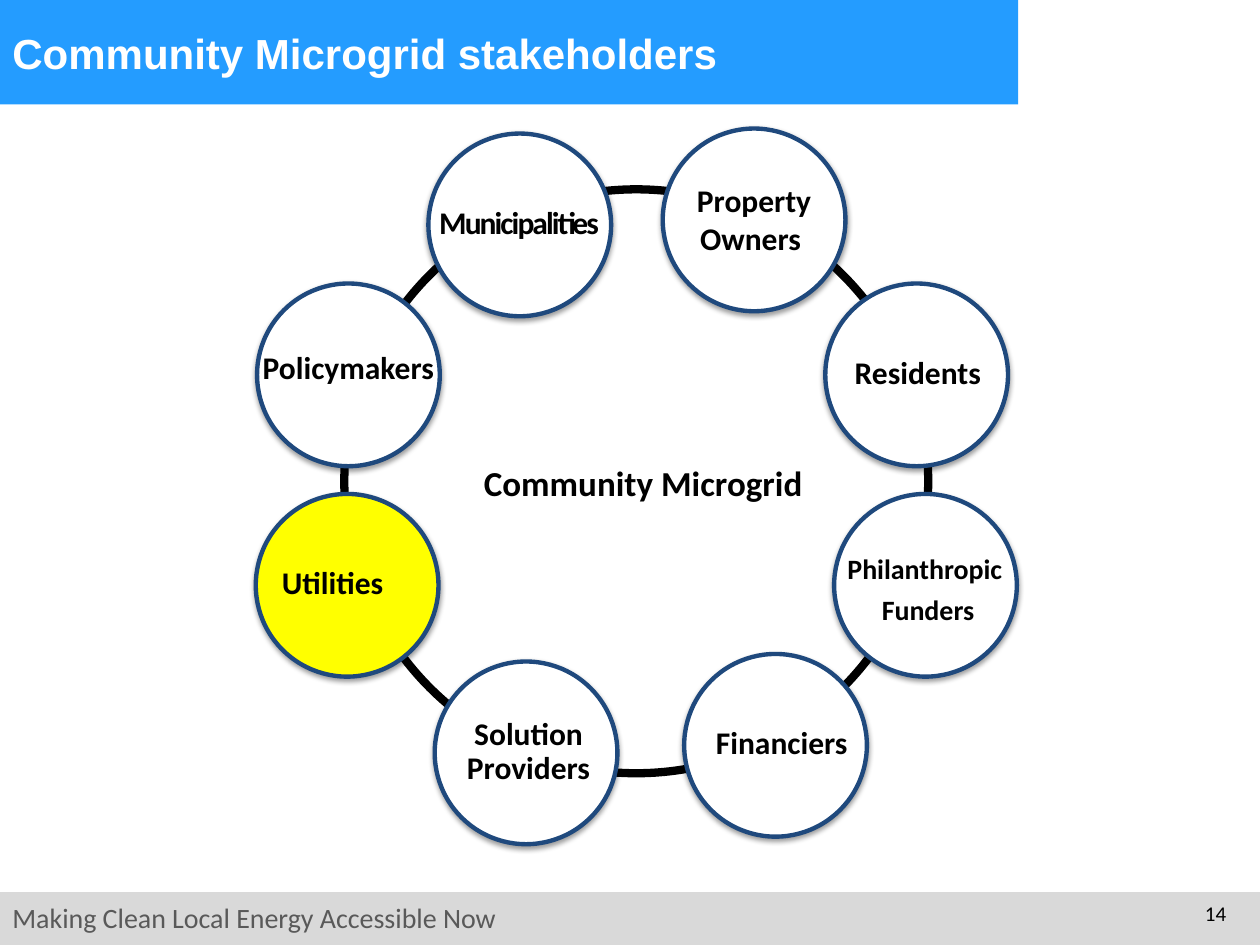
from lxml import etree
from pptx import Presentation
from pptx.dml.color import RGBColor
from pptx.enum.shapes import MSO_SHAPE
from pptx.enum.text import MSO_ANCHOR, PP_ALIGN
from pptx.oxml.ns import qn
from pptx.util import Inches, Pt

RECTANGLE, OVAL, DONUT = MSO_SHAPE.RECTANGLE, MSO_SHAPE.OVAL, MSO_SHAPE.DONUT
TOP, MIDDLE = MSO_ANCHOR.TOP, MSO_ANCHOR.MIDDLE
LEFT, CENTER, RIGHT = PP_ALIGN.LEFT, PP_ALIGN.CENTER, PP_ALIGN.RIGHT


def color(value):
    return RGBColor.from_string(value)


def add_text(place, lines, size, ink="000000", font="Calibri", bold=True,
             align=CENTER, anchor=TOP, wrap=True):
    box = page.shapes.add_textbox(*[Inches(length) for length in place])
    frame = box.text_frame
    frame.word_wrap = wrap
    frame.vertical_anchor = anchor
    for index, line in enumerate(lines):
        para = frame.paragraphs[0] if index == 0 else frame.add_paragraph()
        para.alignment = align
        span = para.add_run()
        span.text = line
        span.font.name = font
        span.font.size = Pt(size)
        span.font.bold = bold
        span.font.color.rgb = color(ink)
    return frame


deck = Presentation()
deck.slide_width, deck.slide_height = Inches(10), Inches(7.5)
page = deck.slides.add_slide(deck.slide_layouts[6])

# Footer band, title band and the ring behind the circles
for kind, place, fill in [
    (RECTANGLE, (0, 7.08, 10, 0.42), "D9D9D9"),
    (RECTANGLE, (0, 0, 8.08, 0.83), "249CFF"),
    (DONUT, (2.7, 1.47, 4.7, 4.7), "000000"),
]:
    shape = page.shapes.add_shape(kind, *[Inches(length) for length in place])
    shape.shadow.inherit = False
    shape.fill.solid()
    shape.fill.fore_color.rgb = color(fill)
    shape.line.fill.background()
    if kind == DONUT:
        shape.adjustments[0] = 0.014

# Title, footer, page number and centre label
add_text((0, 0, 8, 0.83), ["Community Microgrid stakeholders"], 24, "FFFFFF",
         "Arial", align=LEFT, anchor=MIDDLE)
add_text((0, 7.1, 5.17, 0.37), ["Making Clean Local Energy Accessible Now"], 16,
         "595959", bold=False, align=LEFT)
add_text((9.33, 7.1, 0.5, 0.4), ["14"], 12, bold=False, align=RIGHT)
add_text((3.73, 3.61, 2.75, 0.44), ["Community Microgrid"], 20, wrap=False)

# Stakeholders: circle left and top, label left, top and width, lines, size
DIAMETER, LABEL_HEIGHT = 1.45, 1.02
stakeholders = [
    (5.43, 5.19, 5.62, 5.40, 1.17, ["Financiers"], 18),
    (3.45, 5.25, 3.49, 5.46, 1.41, ["Solution Providers"], 18),
    (2.03, 3.92, 2.02, 4.13, 1.24, ["Utilities"], 18),
    (5.26, 1.02, 5.26, 1.23, 1.45, ["Property Owners "], 18),
    (3.40, 1.06, 3.35, 1.27, 1.54, ["Municipalities"], 18),
    (6.55, 2.25, 6.70, 2.46, 1.17, ["Residents"], 18),
    (6.62, 3.92, 6.67, 4.18, 1.39, ["Philanthropic ", "Funders"], 16),
    (2.04, 2.25, 2.06, 2.42, 1.41, ["Policymakers"], 18),
]
for left, top, label_left, label_top, label_width, lines, size in stakeholders:
    circle = page.shapes.add_shape(OVAL, Inches(left), Inches(top),
                                   Inches(DIAMETER), Inches(DIAMETER))
    circle.fill.solid()
    circle.fill.fore_color.rgb = color("FFFF00" if lines == ["Utilities"] else "FFFFFF")
    circle.line.color.rgb = color("1F497D")
    circle.line.width = Pt(2.5)

    # Soft shadow straight below the circle
    circle.shadow.inherit = False
    effects = circle.element.spPr.find(qn("a:effectLst"))
    shadow = etree.SubElement(effects, qn("a:outerShdw"), blurRad=str(Pt(3.1)),
                              dist=str(Pt(1.6)), dir="5400000", rotWithShape="0")
    tint = etree.SubElement(shadow, qn("a:srgbClr"), val="000000")
    etree.SubElement(tint, qn("a:alpha"), val="38000")

    frame = add_text((label_left, label_top, label_width, LABEL_HEIGHT), lines, size,
                     anchor=MIDDLE)
    frame.margin_left = frame.margin_right = Inches(0.01)
    frame.margin_top = frame.margin_bottom = Inches(0.01)
    for para in frame.paragraphs:
        if lines != ["Property Owners "]:
            para.line_spacing = 0.9
            para.space_after = Pt(0.35 * size)
        if lines == ["Municipalities"]:
            para.runs[0].font._element.set("spc", "-110")

deck.save("out.pptx")
